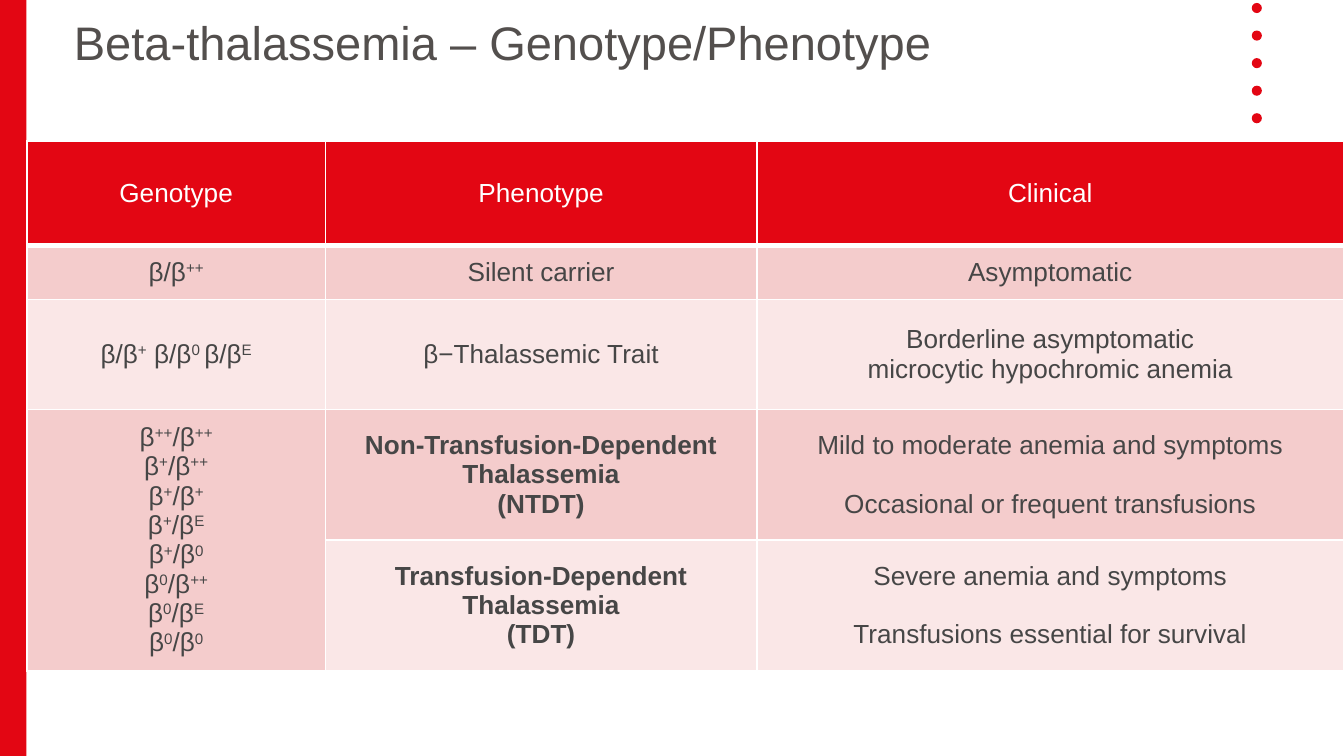
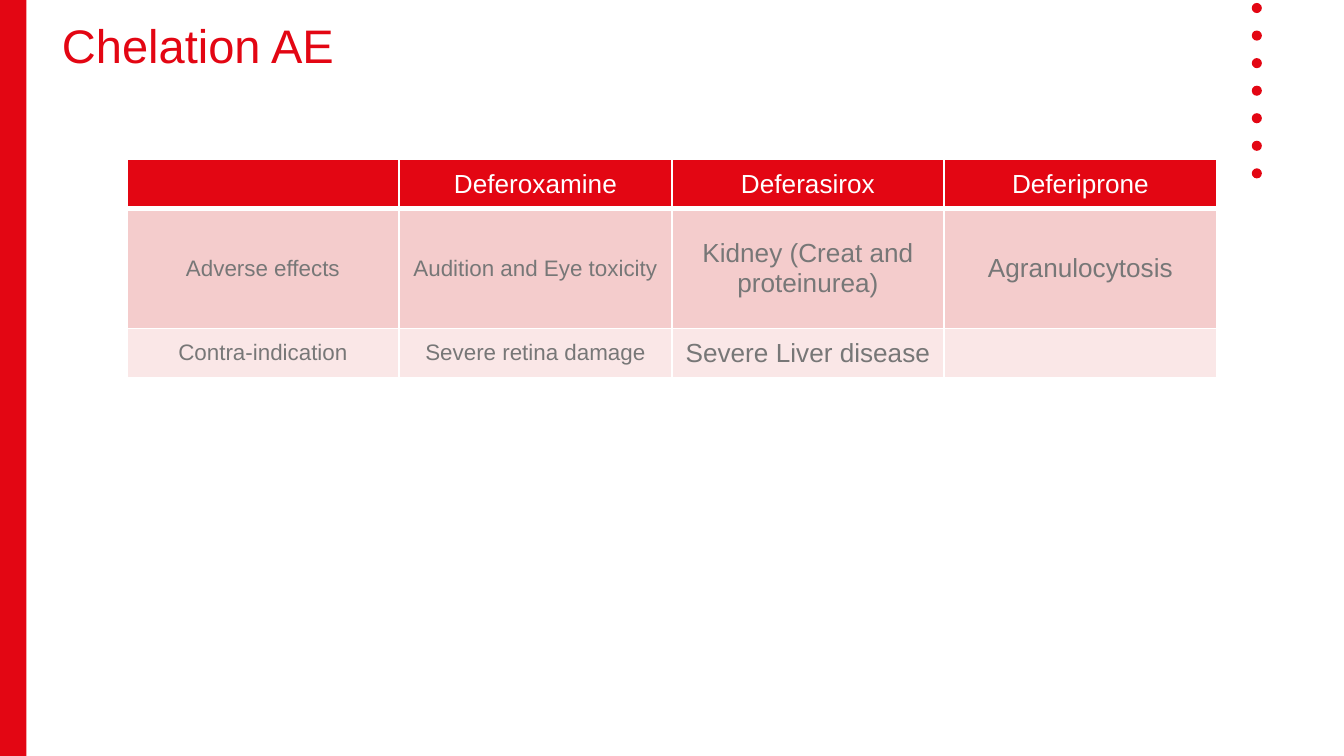
from lxml.etree import SubElement
from pptx import Presentation
from pptx.dml.color import RGBColor
from pptx.enum.shapes import MSO_SHAPE
from pptx.enum.text import MSO_ANCHOR, MSO_AUTO_SIZE, PP_ALIGN
from pptx.oxml.ns import qn
from pptx.util import Pt

RED, WHITE = "E30613", "FFFFFF"
BANDS = ["F4CCCC", "FAE7E7"]
FONT = "Arial"
color = RGBColor.from_string

deck = Presentation()
deck.slide_width, deck.slide_height = Pt(720), Pt(405)
layout = deck.slide_layouts[5]
for holder in list(layout.placeholders)[1:]:
    holder.element.getparent().remove(holder.element)


def add_page(title, left, top, ink, line_spacing):
    page = deck.slides.add_slide(layout)
    box = page.shapes.title
    box.left, box.top, box.width, box.height = Pt(left), Pt(top), Pt(515.5), Pt(32.4)
    frame = box.text_frame
    frame.text = title
    frame.auto_size = MSO_AUTO_SIZE.NONE
    frame.vertical_anchor = MSO_ANCHOR.BOTTOM
    para = frame.paragraphs[0]
    para.alignment = PP_ALIGN.LEFT
    para.line_spacing = line_spacing
    para.font.name, para.font.size = FONT, Pt(25.2)
    para.font.color.rgb = color(ink)
    return page


def add_banded_table(page, left, top, widths, heights, rows, ink, sizes):
    """Line breaks in a cell separate paragraphs; text between bars is superscript."""
    table = page.shapes.add_table(
        len(rows), len(widths), Pt(left), Pt(top), Pt(sum(widths)), Pt(sum(heights))
    ).table
    for column, width in zip(table.columns, widths):
        column.width = Pt(width)
    for row, height in zip(table.rows, heights):
        row.height = Pt(height)
    for i, texts in enumerate(rows):
        for j, text in enumerate(texts):
            cell = table.cell(i, j)
            cell.vertical_anchor = MSO_ANCHOR.MIDDLE
            cell.margin_left = cell.margin_right = Pt(5.5)
            cell.margin_top = cell.margin_bottom = Pt(2.8)
            for side in ("lnL", "lnR", "lnT", "lnB"):
                weight = 3 if i == 0 and side == "lnB" else 1
                line = SubElement(cell._tc.get_or_add_tcPr(), qn(f"a:{side}"), w=str(Pt(weight)))
                SubElement(SubElement(line, qn("a:solidFill")), qn("a:srgbClr"), val=WHITE)
            cell.fill.solid()
            cell.fill.fore_color.rgb = color(BANDS[(i - 1) % 2] if i else RED)
            frame = cell.text_frame
            for k, line_text in enumerate(text.split("\n")):
                para = frame.add_paragraph() if k else frame.paragraphs[0]
                para.alignment = PP_ALIGN.CENTER
                para.font.name = FONT
                para.font.size = Pt(sizes[j] if i else 14)
                para.font.bold = False
                para.font.color.rgb = color(ink if i else WHITE)
                for n, piece in enumerate(line_text.split("|")):
                    if piece:
                        span = para.add_run()
                        span.text = piece
                        if n % 2:
                            span._r.get_or_add_rPr().set("baseline", "30000")
    return table


# Slide 1: genotype and phenotype
page = add_page("Beta-thalassemia – Genotype/Phenotype", 32.4, 8.6, "534F4D", 0.8)

# The red band and the dots belong to the layout that both slides use
band = page.shapes.add_shape(MSO_SHAPE.RECTANGLE, 0, 0, Pt(14.2), Pt(405))
dots = [
    page.shapes.add_shape(MSO_SHAPE.OVAL, Pt(670.6), Pt(1.6 + 14.76 * i), Pt(5.4), Pt(5.4))
    for i in range(7)
]
for shape in [band, *dots]:
    shape.shadow.inherit = False
    shape.fill.solid()
    shape.fill.fore_color.rgb = color(RED)
    shape.line.fill.background()
for shape in [band, *dots]:
    layout.shapes.element.append(shape.element)

allele_pairs = ["++ ++", "+ ++", "+ +", "+ Ε", "+ 0", "0 ++", "0 Ε", "0 0"]
genotypes = "\n".join("β|{}|/β|{}|".format(*pair.split()) for pair in allele_pairs)
phenotype_table = add_banded_table(
    page, 14.4, 75.4, [160, 231, 314.6], [56, 29, 59, 70, 70],
    [
        ["Genotype", "Phenotype", "Clinical"],
        ["β/β|++|", "Silent carrier", "Asymptomatic"],
        ["β/β|+| β/β|0 |β/β|Ε|", "β−Thalassemic Trait",
         "Borderline asymptomatic\nmicrocytic hypochromic anemia"],
        [genotypes, "Non-Transfusion-Dependent\nThalassemia\n(NTDT)",
         "Mild to moderate anemia and symptoms\nOccasional or frequent transfusions"],
        ["", "Transfusion-Dependent Thalassemia\n(TDT)",
         "Severe anemia and symptoms\nTransfusions essential for survival"],
    ],
    "464646", [14, 14, 14],
)
phenotype_table.cell(3, 0).merge(phenotype_table.cell(4, 0))
for i in (3, 4):
    for para in phenotype_table.cell(i, 1).text_frame.paragraphs:
        para.font.bold = True
    phenotype_table.cell(i, 2).text_frame.paragraphs[1].space_before = Pt(15.7)

# Slide 2: adverse effects of chelation
page = add_page("Chelation AE", 26, 10.8, RED, 0.9)
add_banded_table(
    page, 67.9, 85.4, [146] * 4, [26.4, 64.2, 26.4],
    [
        ["", "Deferoxamine", "Deferasirox", "Deferiprone"],
        ["Adverse effects", "Audition and Eye toxicity",
         "Kidney (Creat and proteinurea)", "Agranulocytosis"],
        ["Contra-indication", "Severe retina damage", "Severe Liver disease", ""],
    ],
    "777777", [12, 12, 14, 14],
)

deck.save("out.pptx")
